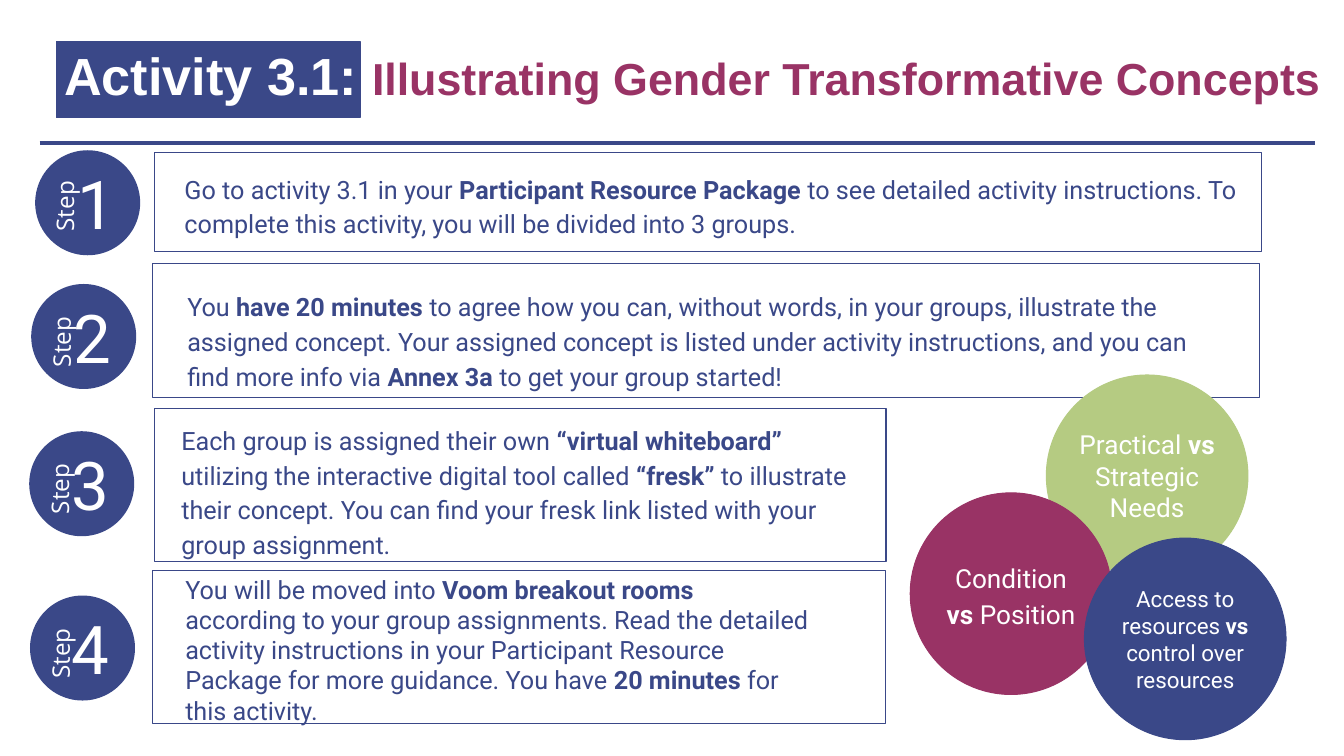
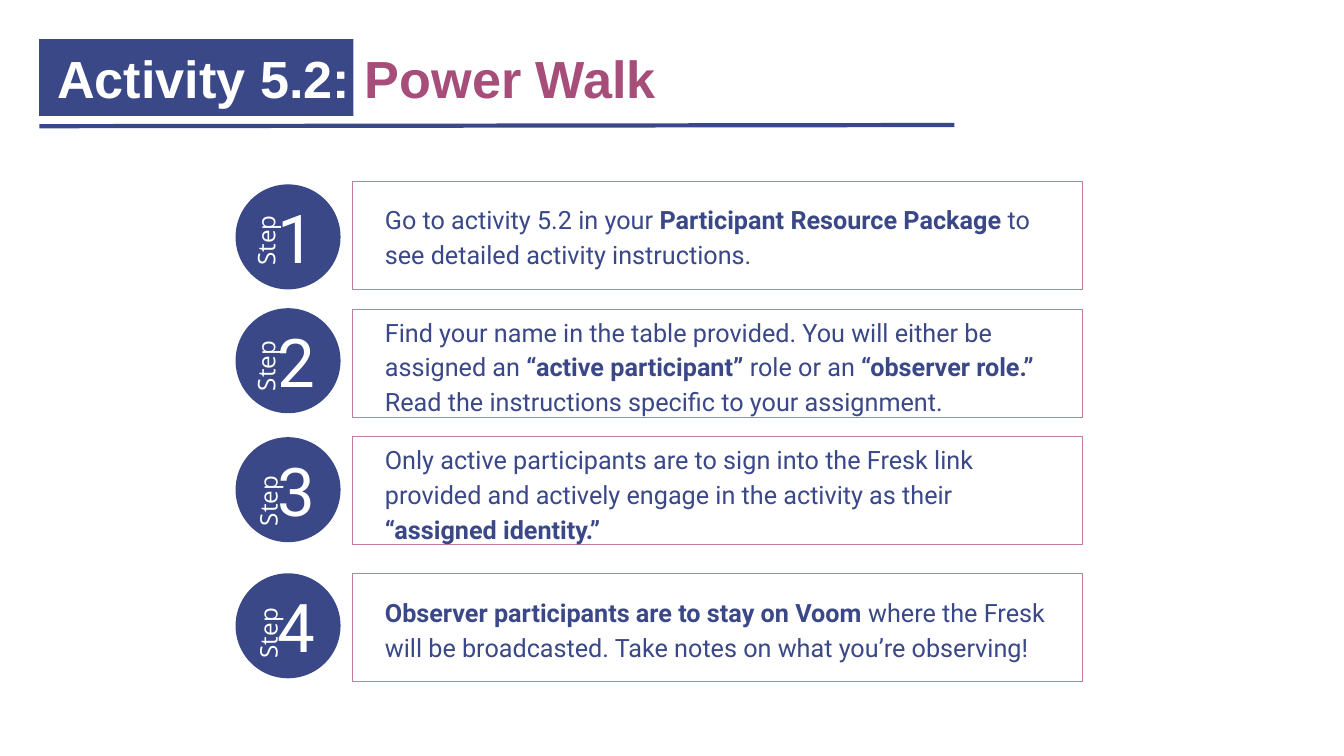
from lxml import etree
from pptx import Presentation
from pptx.dml.color import RGBColor
from pptx.enum.shapes import MSO_CONNECTOR, MSO_SHAPE
from pptx.enum.text import MSO_ANCHOR, PP_ALIGN
from pptx.oxml.ns import qn
from pptx.util import Cm, Pt

RECT, OVAL = MSO_SHAPE.RECTANGLE, MSO_SHAPE.OVAL
STRAIGHT = MSO_CONNECTOR.STRAIGHT
TOP, MIDDLE = MSO_ANCHOR.TOP, MSO_ANCHOR.MIDDLE
LEFT, CENTER = PP_ALIGN.LEFT, PP_ALIGN.CENTER

COLORS = {
    "navy": "3A4888",
    "plum": "993365",
    "rose": "A64D79",
    "pink": "C27BA0",
    "green": "B5CB82",
    "white": "FFFFFF",
}
BODY, TITLE, LABEL = "Roboto", "Arial", "Open Sans"
BADGE, BUBBLE = 2.54, 5.08          # circle diameters
LABEL_W, LABEL_H = 2.57, 1.27
BAND_H, TITLE_H = 1.93, 1.85


def rgb(name):
    return RGBColor.from_string(COLORS[name])


def set_all(obj, **values):
    for name, value in values.items():
        setattr(obj, name, value)


# Text: **double stars** switch bold on and off
def add_run(p, text, font, size, color, bold=False):
    r = p.add_run()
    r.text = text
    set_all(r.font, name=font, size=Pt(size), bold=bold)
    r.font.color.rgb = rgb(color)


def add_marked(p, text, font, size, color):
    for i, part in enumerate(text.split("**")):
        if part:
            add_run(p, part, font, size, color, bold=i % 2 == 1)


def frame(sp, inset_x=0, inset_y=0, anchor=MIDDLE, align=CENTER, spacing=None):
    """Prepare the text frame and return its first paragraph."""
    tf = sp.text_frame
    set_all(tf, word_wrap=True, vertical_anchor=anchor,
            margin_left=Cm(inset_x), margin_right=Cm(inset_x),
            margin_top=Cm(inset_y), margin_bottom=Cm(inset_y))
    p = tf.paragraphs[0]
    set_all(p, alignment=align, line_spacing=spacing)
    return p


# Basic elements
def add_box(s, kind, at, fill=None, line=None, width=0.75):
    sp = s.shapes.add_shape(kind, *map(Cm, at))
    sp.shadow.inherit = False
    if fill:
        sp.fill.solid()
        sp.fill.fore_color.rgb = rgb(fill)
    else:
        sp.fill.background()
    if line:
        sp.line.color.rgb = rgb(line)
        sp.line.width = Pt(width)
    else:
        sp.line.fill.background()
    return sp


def add_text(s, at):
    return s.shapes.add_textbox(*map(Cm, at))


def add_rule(s, ends):
    ln = s.shapes.add_connector(STRAIGHT, *map(Cm, ends))
    ln.line.color.rgb = rgb("navy")
    ln.line.width = Pt(3)
    etree.SubElement(ln._element.spPr, qn("a:effectLst"))


# Slide parts
def add_title(s, number, name, size, color, band, text, rule, outline=None):
    """band and text are (left, top, width)."""
    add_rule(s, rule)
    add_box(s, RECT, (*band, BAND_H), "navy", outline, 1)
    p = frame(add_text(s, (*text, TITLE_H)), 0.25, 0.13, TOP, LEFT)
    add_run(p, f"Activity {number}: ", TITLE, 37.3, "white", True)
    add_run(p, name, TITLE, size, color, True)


def add_badge(s, number, x, y, dx, dy):
    """A numbered circle with a turned label, shifted by dx and dy."""
    sp = add_box(s, OVAL, (x, y, BADGE, BADGE), "navy", "navy", 3)
    add_run(frame(sp), f" {number}", BODY, 48, "white")
    label = add_text(s, (x + dx, y + dy, LABEL_W, LABEL_H))
    label.rotation = 270
    add_run(frame(label, 0.33, 0.33, TOP), "Step ", LABEL, 17.3, "white")


def add_step(s, number, box, text_at, badge, text, line, spacing=1.15):
    add_box(s, RECT, box, line=line)
    p = frame(add_text(s, text_at), 0.33, 0.18, MIDDLE, LEFT, spacing)
    add_marked(p, text, BODY, 18, "navy")
    add_badge(s, number, *badge)


def add_bubble(s, x, y, color, text, size, spacing=None):
    sp = add_box(s, OVAL, (x, y, BUBBLE, BUBBLE), color, color)
    add_marked(frame(sp, spacing=spacing), text, BODY, size, "white")


# Slides
def concepts_slide(s):
    add_title(s, "3.1", "Illustrating Gender Transformative Concepts", 32, "plum",
              (1.42, 1.04, 7.65), (1.37, 0.97, 32.49), (1, 3.61, 33.15, 3.61), "navy")
    # box, text area, badge (left, top, label shift), wording, line spacing
    steps = [
        ((3.89, 3.84, 27.91, 2.49), (4.32, 4.32, 27.48, 1.65), (0.94, 3.84, -0.66, 0.64),
         "Go to activity 3.1 in your **Participant Resource Package **to see detailed "
         "activity instructions. To complete this activity, you will be divided into "
         "3 groups.", 1.15),
        ((3.84, 6.63, 27.91, 3.4), (4.39, 7.8, 26.82, 1.5), (0.84, 7.21, -0.64, 0.69),
         "You **have 20 minutes **to agree how you can, without words, in your groups, "
         "illustrate the assigned concept. Your assigned concept is listed under activity "
         "instructions, and you can find more info via **Annex 3a **to get your group "
         "started!", 1.15),
        ((3.89, 10.29, 18.44, 3.86), (4.24, 11.13, 17.55, 2.44), (0.79, 10.92, -0.64, 0.69),
         "Each group is assigned their own **“virtual whiteboard” **utilizing the "
         "interactive digital tool called **“fresk” **to illustrate their concept. You can "
         "find your fresk link listed with your group assignment.", 1.15),
        ((3.84, 14.38, 18.47, 3.86), (4.34, 15.24, 16.38, 2.26), (0.81, 15.06, -0.64, 0.69),
         "You will be moved into **Voom breakout rooms **according to your group "
         "assignments. Read the detailed activity instructions in your Participant "
         "Resource Package for more guidance. You have **20 minutes** for this activity.",
         None),
    ]
    for number, (box, text_at, badge, text, spacing) in enumerate(steps, 1):
        add_step(s, number, box, text_at, badge, text, "navy", spacing)

    # Overlapping concept circles
    add_bubble(s, 26.37, 9.45, "green", "Practical **vs** Strategic Needs", 18.7)
    add_bubble(s, 22.94, 12.42, "plum", "Condition **vs** Position", 18.7, 1.15)
    add_bubble(s, 27.33, 13.56, "navy", "Access to resources **vs** control over resources", 16)


def power_walk_slide(s):
    add_title(s, "5.2", "Power Walk", 37.3, "rose",
              (0.99, 0.99, 7.92), (1.19, 1.04, 22.45), (0.99, 3.18, 24.05, 3.15))
    # box top, text top and height, badge top, label shift, wording
    steps = [
        (4.57, 4.62, 2.57, 4.7, (-0.64, 0.64),
         "Go to activity 5.2 in your **Participant Resource Package **to see detailed "
         "activity instructions."),
        (7.8, 8.31, 1.75, 7.82, (-0.64, 0.69),
         "Find your name in the table provided. You will either be assigned an "
         "**“active participant” **role or an **“observer role.”** Read the instructions "
         "specific to your assignment."),
        (11, 11.79, 1.22, 11.07, (-0.58, 0.84),
         "Only active participants are to sign into the Fresk link provided and actively "
         "engage in the activity as their **“assigned identity.”"),
        (14.45, 15.21, 1.22, 14.5, (-0.58, 0.74),
         "**Observer participants are to stay on Voom **where the Fresk will be "
         "broadcasted. Take notes on what you’re observing!"),
    ]
    for number, (top, text_top, text_h, badge_top, shift, text) in enumerate(steps, 1):
        add_step(s, number, (8.89, top, 18.39, 2.72), (9.37, text_top, 17.58, text_h),
                 (5.99, badge_top, *shift), text, "pink")


def main():
    prs = Presentation()
    set_all(prs, slide_width=Cm(33.87), slide_height=Cm(19.05))
    for build in (concepts_slide, power_walk_slide):
        build(prs.slides.add_slide(prs.slide_layouts[6]))
    prs.save("out.pptx")


if __name__ == "__main__":
    main()
